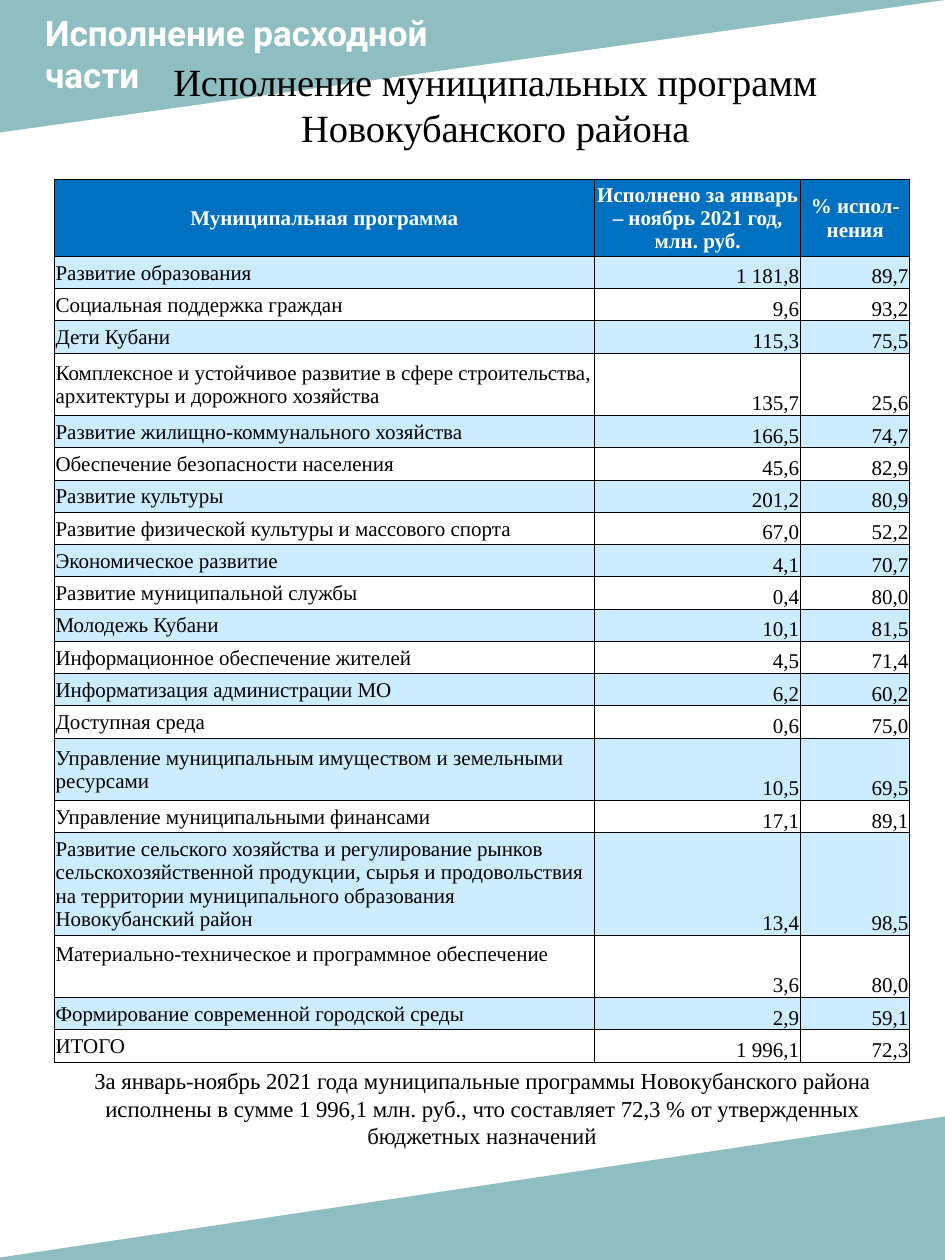
from lxml.etree import SubElement
from pptx import Presentation
from pptx.dml.color import RGBColor
from pptx.enum.shapes import MSO_SHAPE
from pptx.enum.text import MSO_ANCHOR, MSO_AUTO_SIZE, PP_ALIGN
from pptx.oxml import parse_xml
from pptx.oxml.ns import nsdecls, qn
from pptx.util import Cm, Pt


def color(value):
    return RGBColor.from_string(value)


def write(frame, lines, font, size, value, bold, alignment):
    frame.word_wrap = True
    frame.text = "\n".join(lines)
    for paragraph in frame.paragraphs:
        paragraph.alignment = alignment
        paragraph.font.name = font
        paragraph.font.size = Pt(size)
        paragraph.font.bold = bold
        paragraph.font.color.rgb = color(value)


presentation = Presentation()
presentation.slide_width = Cm(19.05)
presentation.slide_height = Cm(25.4)
slide = presentation.slides.add_slide(presentation.slide_layouts[6])

triangles = [
    (0, 0, 19.05, 2.67, "flipH"),
    (-0.33, 22.5, 19.43, 2.9, "flipV"),
]
for left, top, width, height, flip in triangles:
    shape = slide.shapes.add_shape(
        MSO_SHAPE.RIGHT_TRIANGLE, Cm(left), Cm(top), Cm(width), Cm(height)
    )
    shape.rotation = 180
    shape._element.spPr.find(qn("a:xfrm")).set(flip, "1")
    shape.shadow.inherit = False
    shape.line.fill.background()
    shape.fill.solid()
    shape.fill.fore_color.rgb = color("519AA0")
    fill_color = shape._element.spPr.find(qn("a:solidFill"))[0]
    SubElement(fill_color, qn("a:alpha"), val="64000")

SERIF = "Times New Roman"
texts = [
    (0.66, 0.1, 12.37, 1.96, ["Исполнение расходной", "части"],
     "Roboto", 20, "FFFFFF", True, PP_ALIGN.LEFT),
    (1.63, 1.04, 16.71, 2.11, ["Исполнение муниципальных программ Новокубанского района"],
     SERIF, 22, "000000", False, PP_ALIGN.CENTER),
    (1.09, 21.39, 17.25, 1.93,
     ["За январь-ноябрь 2021 года муниципальные программы Новокубанского района "
      "исполнены в сумме 1 996,1 млн. руб., что составляет 72,3 % от утвержденных "
      "бюджетных назначений"],
     SERIF, 13, "000000", False, PP_ALIGN.CENTER),
]
for left, top, width, height, *text in texts:
    box = slide.shapes.add_textbox(Cm(left), Cm(top), Cm(width), Cm(height))
    write(box.text_frame, *text)
    box.text_frame.auto_size = MSO_AUTO_SIZE.SHAPE_TO_FIT_TEXT

SUPPLY = "Материально-техническое и программное обеспечение"
rows = [
    ("Муниципальная программа", "Исполнено за январь – ноябрь 2021 год, млн. руб.", "% испол-нения"),
    ("Развитие образования", "1 181,8", "89,7"),
    ("Социальная поддержка граждан", "9,6", "93,2"),
    ("Дети Кубани", "115,3", "75,5"),
    ("Комплексное и устойчивое развитие в сфере строительства, "
     "архитектуры и дорожного хозяйства", "135,7", "25,6"),
    ("Развитие жилищно-коммунального хозяйства", "166,5", "74,7"),
    ("Обеспечение безопасности населения", "45,6", "82,9"),
    ("Развитие культуры", "201,2", "80,9"),
    ("Развитие физической культуры и массового спорта", "67,0", "52,2"),
    ("Экономическое развитие", "4,1", "70,7"),
    ("Развитие муниципальной службы", "0,4", "80,0"),
    ("Молодежь Кубани", "10,1", "81,5"),
    ("Информационное обеспечение жителей", "4,5", "71,4"),
    ("Информатизация администрации МО", "6,2", "60,2"),
    ("Доступная среда", "0,6", "75,0"),
    ("Управление муниципальным имуществом и земельными ресурсами", "10,5", "69,5"),
    ("Управление муниципальными финансами", "17,1", "89,1"),
    ("Развитие сельского хозяйства и регулирование рынков "
     "сельскохозяйственной продукции, сырья и продовольствия на территории "
     "муниципального образования Новокубанский район", "13,4", "98,5"),
    (SUPPLY, "3,6", "80,0"),
    ("Формирование современной городской среды", "2,9", "59,1"),
    ("ИТОГО", "1 996,1", "72,3"),
]
column_widths = [10.9, 4.15, 2.2]
tall_rows = {0: 1.26, 4: 1.26, 15: 1.26, 17: 1.88, 18: 1.26}

table = slide.shapes.add_table(
    len(rows), len(column_widths), Cm(1.09), Cm(3.61), Cm(17.25), Cm(17.75)
).table
table.first_row = False
table.horz_banding = False
for column, width in zip(table.columns, column_widths):
    column.width = Cm(width)

for row_index, values in enumerate(rows):
    table.rows[row_index].height = Cm(tall_rows.get(row_index, 0.65))
    header = row_index == 0
    band = "0070C0" if header else "CCECFF" if row_index % 2 else "FFFFFF"
    for column_index, value in enumerate(values):
        cell = table.cell(row_index, column_index)
        number = not header and column_index > 0
        alignment = PP_ALIGN.CENTER if header else PP_ALIGN.RIGHT if number else PP_ALIGN.LEFT
        write(cell.text_frame, [value], SERIF, 12,
              "FFFFFF" if header else "000000", header, alignment)
        cell.vertical_anchor = MSO_ANCHOR.BOTTOM if number else MSO_ANCHOR.MIDDLE
        cell.margin_left = cell.margin_right = cell.margin_top = Cm(0.03)
        cell.margin_bottom = Cm(0.5 if value == SUPPLY else 0)
        properties = cell._tc.get_or_add_tcPr()
        for side in "LRTB":
            properties.append(parse_xml(
                f'<a:ln{side} {nsdecls("a")} w="6350"><a:solidFill>'
                f'<a:srgbClr val="000000"/></a:solidFill></a:ln{side}>'
            ))
        cell.fill.solid()
        cell.fill.fore_color.rgb = color(band)

presentation.save("out.pptx")
